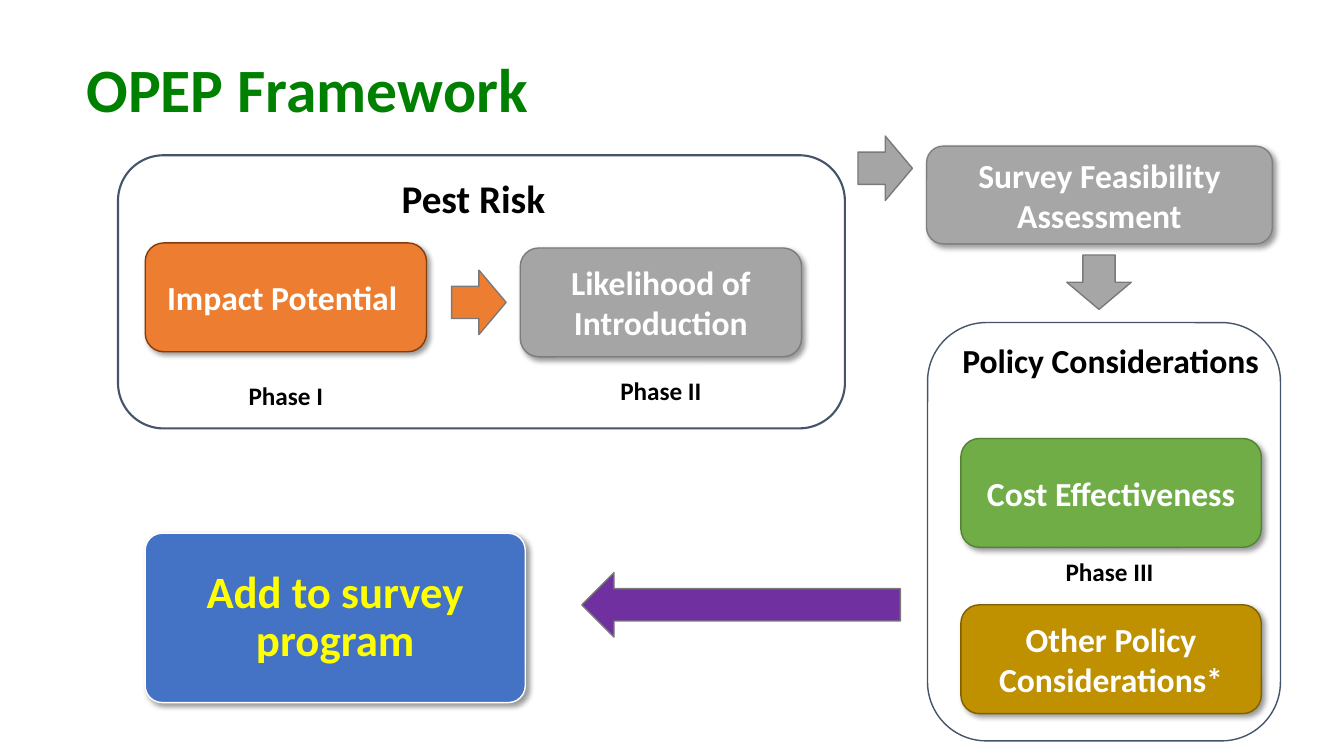
from dataclasses import dataclass

from lxml import etree
from pptx import Presentation
from pptx import util as u
from pptx.dml.color import RGBColor
from pptx.enum import shapes, text
from pptx.oxml import parse_xml
from pptx.oxml.ns import nsdecls, qn

PX = u.Inches(1) // 100
COLOURS = {
    "black": "000000", "white": "FFFFFF", "yellow": "FFFF00",
    "title": "008000", "frame": "44546A",
    "orange": "ED7D31", "orange_edge": "843C0B",
    "grey": "A6A6A6", "grey_edge": "808080",
    "silver": "A5A5A5", "silver_edge": "7C7C7C", "arrow_edge": "7A7A7A",
    "green": "70AD47", "green_edge": "548235",
    "gold": "BF9000", "gold_edge": "806000",
    "blue": "4472C4", "purple": "7030A0",
}
SHADOW = f"""<a:outerShdw {nsdecls("a")} blurRad="{u.Pt(4)}" dist="{u.Pt(3)}"
 dir="2700000" algn="tl" rotWithShape="0">
<a:srgbClr val="{COLOURS["black"]}"><a:alpha val="40000"/></a:srgbClr></a:outerShdw>"""
ROUNDED = shapes.MSO_SHAPE.ROUNDED_RECTANGLE
TOP, MIDDLE = text.MSO_ANCHOR.TOP, text.MSO_ANCHOR.MIDDLE
LEFT, CENTER = text.PP_ALIGN.LEFT, text.PP_ALIGN.CENTER


@dataclass
class Frame:
    at: tuple[int, int, int, int]
    line_width: float


@dataclass
class Box:
    at: tuple[int, int, int, int]
    fill: str
    edge: str
    wording: str
    size: int = 24
    colour: str = "white"
    corner: float = 0.17
    spacing: float = 1.0


@dataclass
class Label:
    at: tuple[int, int, int, int]
    wording: str
    size: int = 18
    colour: str = "black"
    align: text.PP_ALIGN = CENTER
    anchor: text.MSO_ANCHOR = TOP
    spacing: float = 1.0


@dataclass
class Arrow:
    at: tuple[int, int, int, int]
    fill: str
    rotation: int = 0


FRAMES = [Frame((117, 154, 721, 271), 1.5), Frame((920, 320, 350, 415), 1)]
BOXES = [
    Box((919, 145, 343, 97), "grey", "grey_edge", "Survey Feasibility\nAssessment"),
    Box((953, 435, 298, 108), "green", "green_edge", "Cost Effectiveness"),
    Box((953, 600, 298, 108), "gold", "gold_edge", "Other Policy Considerations*"),
    Box((144, 241, 279, 108), "orange", "orange_edge", "Impact Potential "),
    Box((516, 246, 279, 108), "silver", "silver_edge", "Likelihood of Introduction"),
    Box((144, 529, 377, 168), "blue", "white", "Add to survey program", 32, "yellow", 0.1, 0.9),
]
LABELS = [
    Label((76, 29, 460, 125), "OPEP Framework", 44, "title", LEFT, MIDDLE, 0.9),
    Label((144, 168, 651, 57), "Pest Risk", 28),
    Label((941, 332, 321, 91), "Policy Considerations", 24),
    Label((173, 372, 221, 40), "Phase I"),
    Label((545, 367, 221, 40), "Phase II"),
    Label((990, 547, 221, 40), "Phase III"),
]
ARROWS = [
    Arrow((448, 268, 54, 64), "orange"),
    Arrow((851, 135, 54, 64), "silver"),
    Arrow((1063, 248, 54, 64), "grey", 90),
    Arrow((577, 568, 316, 64), "purple", 180),
]


def rgb(name: str) -> RGBColor:
    return RGBColor.from_string(COLOURS[name])


def emu(at: tuple[int, ...]) -> list[int]:
    return [length * PX for length in at]


def apply(target: object, formats: dict) -> None:
    for name, value in formats.items():
        setattr(target, name, value)


def write(shape, item: Box | Label, align: text.PP_ALIGN, anchor: text.MSO_ANCHOR) -> None:
    frame = shape.text_frame
    apply(frame, {"text": item.wording, "word_wrap": True, "vertical_anchor": anchor})
    for paragraph in frame.paragraphs:
        apply(paragraph, {"alignment": align, "line_spacing": item.spacing})
        for run in paragraph.runs:
            apply(run.font, {"name": "Calibri", "size": u.Pt(item.size), "bold": True})
            run.font.color.rgb = rgb(item.colour)


def add_outline(slide, kind: shapes.MSO_SHAPE, at: tuple[int, ...], edge: str,
                fill: str | None = None, width: float = 1):
    shape = slide.shapes.add_shape(kind, *emu(at))
    shape.shadow.inherit = False
    if fill:
        shape.fill.solid()
        shape.fill.fore_color.rgb = rgb(fill)
    else:
        shape.fill.background()
    shape.line.color.rgb = rgb(edge)
    shape.line.width = u.Pt(width)
    return shape


def draw_frame(slide, frame: Frame) -> None:
    add_outline(slide, ROUNDED, frame.at, "frame", width=frame.line_width)


def draw_box(slide, box: Box) -> None:
    shape = add_outline(slide, ROUNDED, box.at, box.edge, box.fill)
    shape.adjustments[0] = box.corner
    effects: etree._Element = shape._element.spPr.find(qn("a:effectLst"))
    effects.append(parse_xml(SHADOW))
    write(shape, box, CENTER, MIDDLE)


def draw_label(slide, label: Label) -> None:
    write(slide.shapes.add_textbox(*emu(label.at)), label, label.align, label.anchor)


def draw_arrow(slide, arrow: Arrow) -> None:
    shape = add_outline(slide, shapes.MSO_SHAPE.RIGHT_ARROW, arrow.at, "arrow_edge", arrow.fill)
    shape.rotation = arrow.rotation


def main() -> None:
    presentation = Presentation()
    apply(presentation, {"slide_width": 1333 * PX, "slide_height": 750 * PX})
    slide = presentation.slides.add_slide(presentation.slide_layouts[6])
    for draw, items in ((draw_frame, FRAMES), (draw_box, BOXES),
                        (draw_label, LABELS), (draw_arrow, ARROWS)):
        for item in items:
            draw(slide, item)
    presentation.save("out.pptx")


if __name__ == "__main__":
    main()
